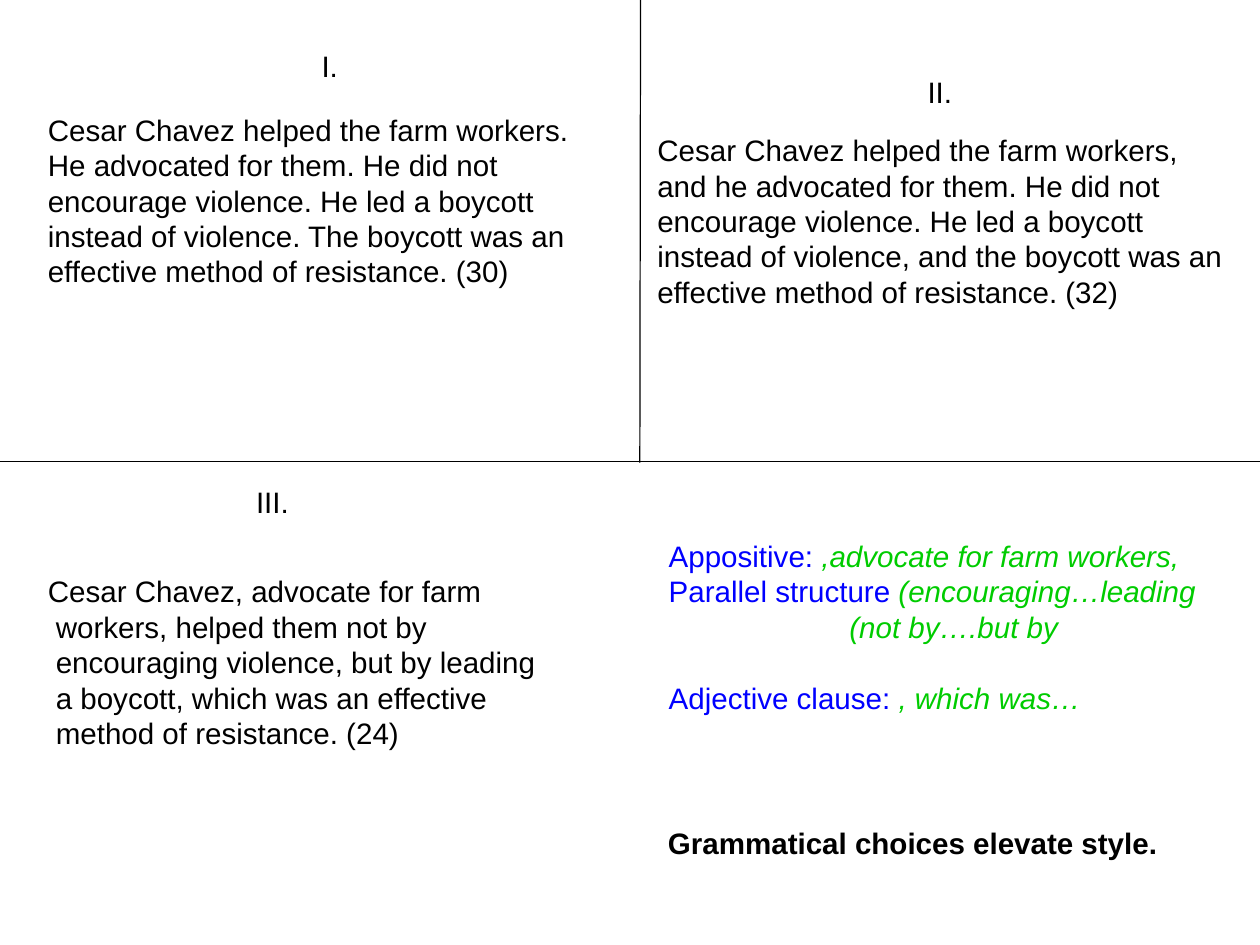
from pptx import Presentation
from pptx.dml.color import RGBColor
from pptx.enum.shapes import MSO_CONNECTOR as Conn
from pptx.enum.text import MSO_AUTO_SIZE as Fit
from pptx.oxml.ns import qn
from pptx.util import Inches, Pt
from lxml.etree import SubElement

BLACK = RGBColor(0x00, 0x00, 0x00)
BLUE = RGBColor(0x00, 0x00, 0xFF)
GREEN = RGBColor(0x00, 0xCC, 0x00)
WHITE = RGBColor(0xFF, 0xFF, 0xFF)

COLS, ROWS = 128, 96
MID_X, MID_Y = 65, 47
LINE = 4.68
BODY = 18.72
LEAD = 28.8

FIRST = [
    "Cesar Chavez helped the farm workers.",
    "He advocated for them. He did not",
    "encourage violence. He led a boycott instead of violence. "
    "The boycott was an",
    "effective method of resistance. (30)",
]
SECOND = [
    "Cesar Chavez helped the farm workers, and he advocated for them. "
    "He did not",
    "encourage violence. He led a boycott instead of violence, "
    "and the boycott was an effective method of resistance. (32)",
]
THIRD = [
    "Cesar Chavez, advocate for farm",
    "workers, helped them not by",
    "encouraging violence, but by leading",
    "a boycott, which was an effective",
    "method of resistance. (24)",
]
TERMS = [
    ("Appositive: ", ",advocate for farm workers,", 0, 0),
    ("Parallel structure ", "(encouraging…leading", 0, 0),
    ("", "(not by….but by", 2.04, 0),
    ("Adjective clause: ", ", which was…", 0, LEAD),
]


def grid(n):
    """Turn grid steps into a length."""
    return Inches(n / 9)


def frame(slide, box, wrap=False):
    """Add an empty text box and return its text frame."""
    text = slide.shapes.add_textbox(*map(grid, box)).text_frame
    text.margin_left = text.margin_right = Inches(0.07)
    text.margin_top = text.margin_bottom = Inches(0.07)
    text.word_wrap = wrap
    text.auto_size = Fit.SHAPE_TO_FIT_TEXT
    return text


def para(text, first, indent=0, before=0):
    """Return the first or a new paragraph, spaced and indented."""
    part = text.paragraphs[0] if first else text.add_paragraph()
    part.line_spacing = Pt(LEAD)
    part.space_before = Pt(before)
    if indent:
        part._p.get_or_add_pPr().set("marL", str(Inches(indent)))
    return part


def write(part, words, color=BLACK, bold=False, italic=False):
    """Add a formatted run to a paragraph."""
    run = part.add_run()
    run.text = words
    font = run.font
    font.name, font.size = "Arial", Pt(24)
    font.bold, font.italic = bold, italic
    font.color.rgb = color


def block(slide, box, lines, wrap=False, hang=0, bold=False):
    """Place lines of plain text in a box."""
    text = frame(slide, box, wrap)
    for i, words in enumerate(lines):
        write(para(text, i == 0, hang if i else 0), words, bold=bold)


def draft(slide, left, top, mark, head, body, lines, wrap=True, hang=0):
    """Place a numbered draft in its quarter."""
    x, y, width = head
    block(slide, (left + x, top + y, width, LINE), [mark])
    x, y, width = body
    block(slide, (left + x, top + y, width, BODY), lines, wrap, hang)


def notes(slide, left, top):
    """Place the grammar terms and the closing line in their quarter."""
    text = frame(slide, (left + 2.3, top + 7, 54.9, BODY))
    for i, (term, sample, indent, before) in enumerate(TERMS):
        part = para(text, i == 0, indent, before)
        if term:
            write(part, term, color=BLUE)
        write(part, sample, color=GREEN, italic=True)
    block(slide, (left + 2.23, top + 36.16, 51.93, LINE),
          ["Grammatical choices elevate style."], bold=True)


def rule(slide, *ends):
    """Draw a thin black line between two grid points."""
    line = slide.shapes.add_connector(Conn.STRAIGHT, *map(grid, ends))
    line.line.color.rgb = BLACK
    line.line.width = Pt(1)
    SubElement(line._element.spPr, qn("a:effectLst"))


def main():
    """Build the slide and save it."""
    deck = Presentation()
    deck.slide_width, deck.slide_height = grid(COLS), grid(ROWS)
    slide = deck.slides.add_slide(deck.slide_layouts[6])
    fill = slide.background.fill
    fill.solid()
    fill.fore_color.rgb = WHITE
    rule(slide, MID_X + 0.07, 0, MID_X, MID_Y)
    rule(slide, 0, MID_Y - 0.1, COLS, MID_Y - 0.1)
    draft(slide, 0, 0, "I.", (32.04, 4.23, 3.06),
          (4.23, 10.71, 59.13), FIRST)
    draft(slide, MID_X, 0, "II.", (28.6, 6.93, 4.77),
          (1.15, 12.78, 59.13), SECOND)
    draft(slide, 0, MID_Y, "III.", (25.38, 1.51, 4.77),
          (4.23, 10.6, 50.94), THIRD, wrap=False, hang=0.09)
    notes(slide, MID_X, MID_Y)
    deck.save("out.pptx")


if __name__ == "__main__":
    main()
